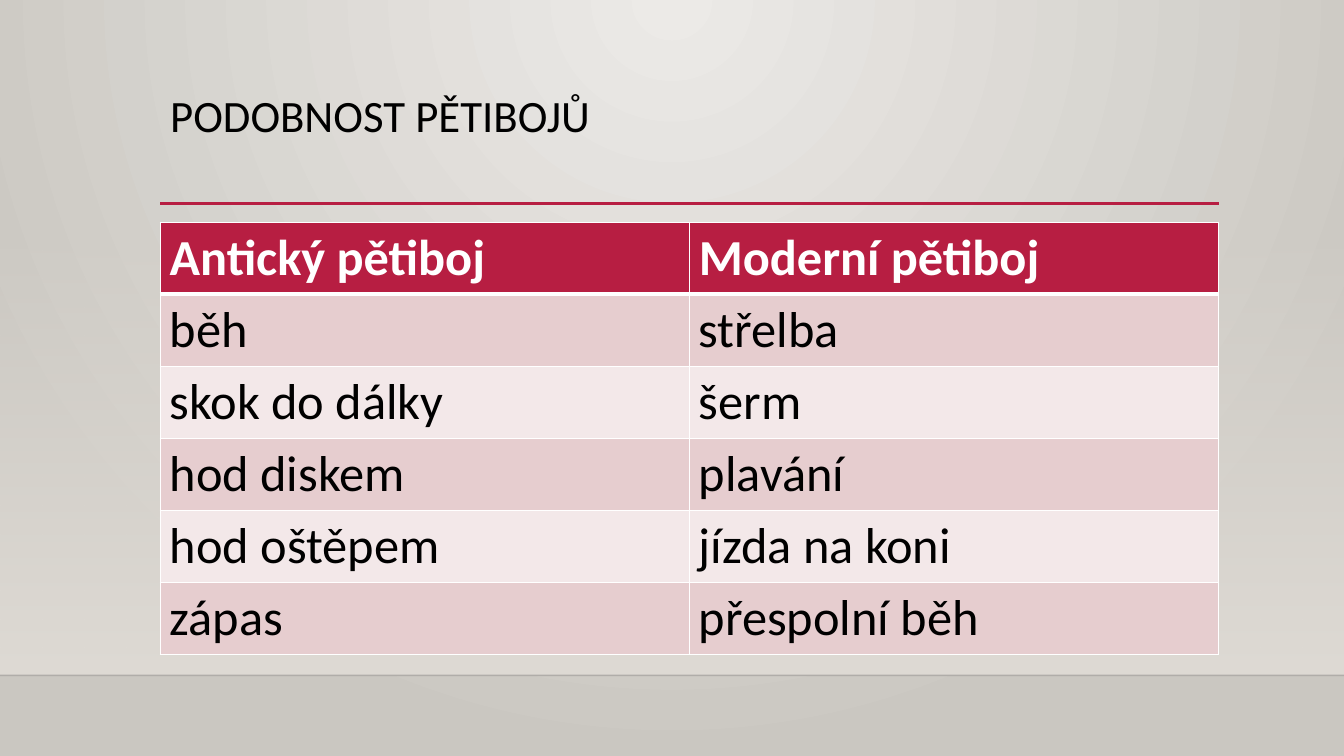
from lxml.etree import SubElement
from pptx import Presentation
from pptx.dml.color import RGBColor
from pptx.enum.shapes import MSO_CONNECTOR, MSO_SHAPE
from pptx.enum.text import MSO_ANCHOR
from pptx.oxml import parse_xml
from pptx.oxml.ns import nsdecls, qn
from pptx.util import Pt

BLACK = RGBColor(0x00, 0x00, 0x00)
INK = RGBColor(0x00, 0x00, 0x01)
WHITE = RGBColor(0xFF, 0xFF, 0xFF)
RED = RGBColor(0xB7, 0x1E, 0x42)
ROSE = RGBColor(0xE6, 0xCD, 0xCF)
PALE = RGBColor(0xF3, 0xE8, 0xE9)
LIGHT = RGBColor(0xEC, 0xEA, 0xE7)
GRAY = RGBColor(0xCA, 0xC7, 0xC1)
SAND = RGBColor(0xDF, 0xDB, 0xD5)

WIDE, HIGH = 960, 540
LEFT, SPAN = 114.5, 756
FLOOR = 482.4

ROWS = [
    ("Antický pětiboj", "Moderní pětiboj"),
    ("běh", "střelba"),
    ("skok do dálky", "šerm"),
    ("hod diskem", "plavání"),
    ("hod oštěpem", "jízda na koni"),
    ("zápas", "přespolní běh"),
]


class Deck:
    font = "Calibri"

    def __init__(self):
        self.prs = Presentation()
        self.prs.slide_width, self.prs.slide_height = Pt(WIDE), Pt(HIGH)
        self.slide = self.prs.slides.add_slide(self.prs.slide_layouts[6])
        self.shapes = self.slide.shapes

    def put(self, item, style):
        for name, value in style.items():
            setattr(item, name, value)

    def label(self, frame, text, size, color, bold=False):
        para = frame.paragraphs[0]
        run = para.add_run()
        run.text = text
        self.put(run.font, {"name": self.font, "size": Pt(size), "bold": bold})
        run.font.color.rgb = color
        return para

    def clear(self, color, share):
        SubElement(color, qn("a:alpha"), val=str(share * 1000))

    def blend(self, fill, colors):
        fill.gradient()
        for place, (stop, color) in enumerate(zip(fill.gradient_stops, colors)):
            stop.color.rgb = color
            stop.position = place

    def back(self, colors):
        self.blend(self.slide.background.fill, colors)
        grad = next(self.slide.element.iter(qn("a:gradFill")))
        glow = parse_xml(
            f'<a:path {nsdecls("a")} path="circle">'
            '<a:fillToRect l="43000" t="0" r="43000" b="100000"/></a:path>')
        grad.replace(grad.find(qn("a:lin")), glow)

    def wash(self, x, y, w, h, color):
        box = self.shapes.add_shape(MSO_SHAPE.RECTANGLE, Pt(x), Pt(y), Pt(w), Pt(h))
        box.shadow.inherit = False
        box.line.fill.background()
        self.blend(box.fill, (color, color))
        box.fill.gradient_angle = 270
        self.clear(next(box.element.iter(qn("a:srgbClr"))), 0)

    def rule(self, x, y, w, color, width, share=100):
        line = self.shapes.add_connector(
            MSO_CONNECTOR.STRAIGHT, Pt(x), Pt(y), Pt(x + w), Pt(y))
        line.line.color.rgb = color
        line.line.width = Pt(width)
        SubElement(line.element.spPr, qn("a:effectLst"))
        if share < 100:
            self.clear(next(line.element.iter(qn("a:srgbClr"))), share)

    def title(self, x, y, w, h, text):
        frame = self.shapes.add_textbox(Pt(x), Pt(y), Pt(w), Pt(h)).text_frame
        self.put(frame, {"word_wrap": True, "vertical_anchor": MSO_ANCHOR.TOP})
        self.label(frame, text, 32, BLACK).line_spacing = 0.9

    def edge(self, cell, color, widths):
        props = cell._tc.get_or_add_tcPr()
        for spot, (side, width) in enumerate(widths.items()):
            props.insert(spot, parse_xml(
                f'<a:ln{side} {nsdecls("a")} w="{Pt(width)}"><a:solidFill>'
                f'<a:srgbClr val="{color}"/></a:solidFill></a:ln{side}>'))

    def table(self, x, y, w, h, rows):
        cols = len(rows[0])
        grid = self.shapes.add_table(
            len(rows), cols, Pt(x), Pt(y), Pt(w), Pt(h)).table
        for r, row in enumerate(rows):
            head = r == 0
            for c, text in enumerate(row):
                cell = grid.cell(r, c)
                self.put(cell, {"margin_left": Pt(6.7), "margin_right": Pt(6.7),
                                "margin_top": Pt(3.6), "margin_bottom": Pt(3.6)})
                cell.fill.solid()
                cell.fill.fore_color.rgb = RED if head else (PALE, ROSE)[r % 2]
                self.edge(cell, WHITE, {"L": 1, "R": 1, "T": 3 if r == 1 else 1,
                                        "B": 3 if head else 1})
                self.label(cell.text_frame, text, 36, WHITE if head else BLACK, head)


def main():
    deck = Deck()
    # Backdrop and floor line
    deck.back((LIGHT, GRAY))
    deck.wash(0, 159, WIDE, FLOOR - 159, SAND)
    deck.rule(0, FLOOR, WIDE, INK, 1, 20)
    # Heading
    deck.rule(LEFT, 145.2, SPAN, RED, 2.5)
    deck.title(LEFT, 63.4, SPAN, 82.8, "PODOBNOST PĚTIBOJŮ")
    # Comparison of the two pentathlons
    deck.table(LEFT, 158.8, SPAN, 308.6, ROWS)
    deck.prs.save("out.pptx")


if __name__ == "__main__":
    main()
